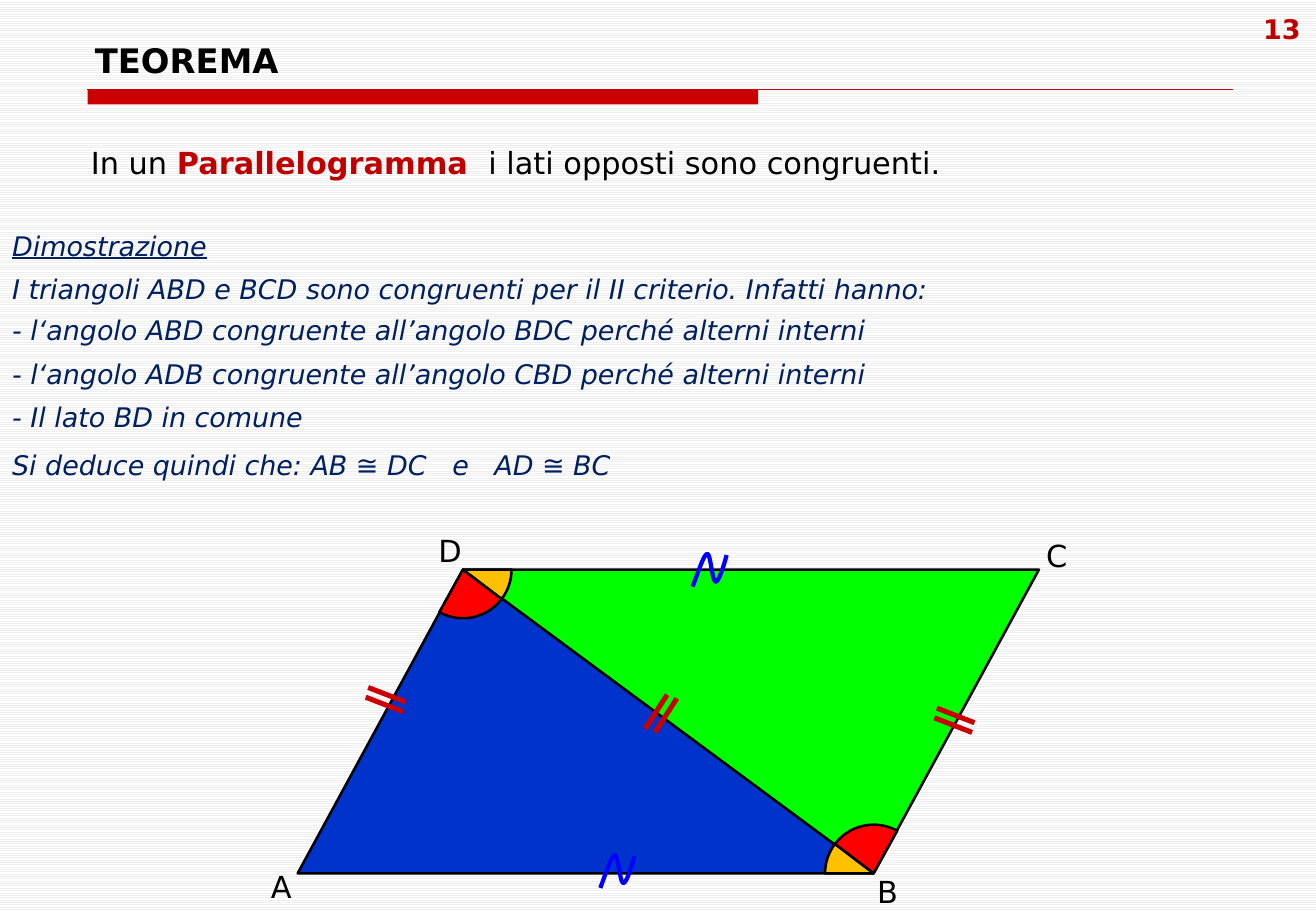
from pptx import Presentation
from pptx.dml.color import RGBColor
from pptx.enum.dml import MSO_PATTERN
from pptx.enum.shapes import MSO_CONNECTOR, MSO_SHAPE
from pptx.enum.text import MSO_ANCHOR, MSO_AUTO_SIZE, PP_ALIGN
from pptx.oxml.ns import qn
from pptx.util import Inches, Pt
from lxml import etree

LEFT, CENTER = PP_ALIGN.LEFT, PP_ALIGN.CENTER
STRAIGHT = MSO_CONNECTOR.STRAIGHT
TRIANGLE, PARALLELOGRAM, PIE, RECT = (
    MSO_SHAPE.ISOSCELES_TRIANGLE, MSO_SHAPE.PARALLELOGRAM, MSO_SHAPE.PIE, MSO_SHAPE.RECTANGLE)
FONT = "DejaVu Sans"
COLORS = {
    "black": "000000", "white": "FFFFFF", "stripe": "EEEEEE", "rule": "CC0000",
    "accent": "C00000", "proof": "002060", "green": "00FF00", "blue": "0033CC",
    "yellow": "FFC000", "red": "FF0000", "wave": "0000FF",
}
# Each proof line with the space before it in points
PROOF = [
    ("Dimostrazione", 0),
    ("I triangoli ABD e BCD sono congruenti per il II criterio. Infatti hanno:", 6.5),
    ("- l‘angolo ABD congruente all’angolo BDC perché alterni interni", 5),
    ("- l‘angolo ADB congruente all’angolo CBD perché alterni interni", 6.5),
    ("- Il lato BD in comune", 6.5),
    ("Si deduce quindi che: AB ≅ DC   e   AD ≅ BC", 9.5),
]


def color(name):
    return RGBColor.from_string(COLORS[name])


def place(sp, x, y, w, h):
    sp.left, sp.top, sp.width, sp.height = (Inches(v) for v in (x, y, w, h))


def add_run(p, text, size=16, fill="black", bold=False, italic=False, underline=False):
    r = p.add_run()
    r.text = text
    f = r.font
    f.name, f.size, f.bold, f.italic, f.underline = FONT, Pt(size), bold, italic, underline
    f.color.rgb = color(fill)


def add_text(s, box, align=LEFT, wrap=True):
    tf = s.shapes.add_textbox(*(Inches(v) for v in box)).text_frame
    tf.word_wrap = wrap
    p = tf.paragraphs[0]
    p.alignment = align
    return p


def style(sp, fill=None, line=None, width=1.5):
    sp.shadow.inherit = False
    if fill:
        sp.fill.solid()
        sp.fill.fore_color.rgb = color(fill)
    else:
        sp.fill.background()
    if line:
        sp.line.color.rgb = color(line)
        sp.line.width = Pt(width)
    else:
        sp.line.fill.background()


def add_preset(s, kind, box, adjustments=(), rotation=0, **look):
    sp = s.shapes.add_shape(kind, *(Inches(v) for v in box))
    for i, value in enumerate(adjustments):
        sp.adjustments[i] = value
    sp.rotation = rotation
    style(sp, **look)


def add_line(s, start, end, line="black", width=1.5):
    c = s.shapes.add_connector(STRAIGHT, *(Inches(v) for v in (*start, *end)))
    c.line.color.rgb = color(line)
    c.line.width = Pt(width)
    etree.SubElement(c._element.spPr, qn("a:effectLst"))


def add_wedge(s, center, start, end, fill):
    """Angle mark; degrees run clockwise from the right."""
    radius = 0.4
    box = (center[0] - radius, center[1] - radius, 2 * radius, 2 * radius)
    add_preset(s, PIE, box, (start * 0.6, end * 0.6), fill=fill, line="black")


def add_double_tick(s, x, y, dx, dy, gap):
    for i in range(2):
        x0, y0 = x + i * gap[0], y + i * gap[1]
        add_line(s, (x0, y0), (x0 + dx, y0 + dy), "rule", 3)


def add_wave(s, x, y):
    """Wavy mark made of three cubic curves, sampled as short segments."""
    knots = [(0, 0.28), (0.05, 0.15), (0.09, 0.02), (0.12, 0.01), (0.15, 0.01),
             (0.16, 0.24), (0.19, 0.24), (0.22, 0.24), (0.27, 0.06), (0.28, 0.02)]
    points = []
    for k in range(0, 9, 3):
        for step in range(1, 13):
            t = step / 12
            weights = ((1 - t) ** 3, 3 * t * (1 - t) ** 2, 3 * t * t * (1 - t), t ** 3)
            points.append(tuple(
                Inches(origin + sum(w * q[axis] for w, q in zip(weights, knots[k:k + 4])))
                for axis, origin in enumerate((x, y))))
    fb = s.shapes.build_freeform(Inches(x), Inches(y + knots[0][1]))
    fb.add_line_segments(points, close=False)
    style(fb.convert_to_shape(), line="wave", width=2.5)


def add_header(s, x, y, w, h):
    # Rule: thick bar and thin line
    add_preset(s, RECT, (x, y + h, 5.52, 0.12), fill="rule")
    add_line(s, (x, y + h), (x + 9.43, y + h), "rule", 0.75)
    # Page number
    add_run(add_text(s, (10.18, 0.05, 0.74, 0.52), CENTER), "13", fill="accent", bold=True)
    # Title
    title = s.shapes.title
    place(title, x - 0.04, y, w, h - 0.03)
    tf = title.text_frame
    tf.vertical_anchor, tf.auto_size = MSO_ANCHOR.BOTTOM, MSO_AUTO_SIZE.NONE
    p = tf.paragraphs[0]
    p.alignment = LEFT
    add_run(p, "TEOREMA", 20, bold=True)


def add_statement(s, *box):
    p = add_text(s, box)
    add_run(p, "In un ", 18)
    add_run(p, "Parallelogramma ", 18, "accent", bold=True)
    add_run(p, " i lati opposti sono congruenti.", 18)


def add_proof(s, *box):
    body = s.placeholders[1]
    place(body, *box)
    tf = body.text_frame
    tf.auto_size = MSO_AUTO_SIZE.NONE
    for i, (text, before) in enumerate(PROOF):
        p = tf.paragraphs[0] if i == 0 else tf.add_paragraph()
        p.space_before = Pt(before)
        pPr = p._p.get_or_add_pPr()
        pPr.set("marL", "0")
        pPr.set("indent", "0")
        etree.SubElement(pPr, qn("a:buNone"))
        add_run(p, text, fill="proof", italic=True, underline=i == 0)


def add_figure(s, x, y, w, h):
    slant = 1.36
    base = w - slant
    a, b, c, d = (x, y + h), (x + base, y + h), (x + w, y), (x + slant, y)
    # Two congruent triangles, outline and diagonal
    apex = (slant / base,)
    add_preset(s, TRIANGLE, (d[0], y, base, h), apex, 180, fill="green")
    add_preset(s, TRIANGLE, (x, y, base, h), apex, fill="blue")
    add_preset(s, PARALLELOGRAM, (x, y, w, h), (slant / h,), line="black")
    add_line(s, d, b)
    # Angle marks, turned by half a circle from D to B
    for vertex, turn in ((d, 0), (b, 180)):
        add_wedge(s, vertex, turn, turn + 37.2, "yellow")
        add_wedge(s, vertex, turn + 37.2, turn + 119, "red")
    # Side marks
    add_double_tick(s, x + 2.86, y + 1.31, 0.18, -0.28, (0.08, 0.03))
    for dx, dy in ((0.56, 1.05), (5.24, 1.22)):
        add_double_tick(s, x + dx, y + dy, 0.31, 0.12, (0.02, -0.08))
    for dx, dy in ((3.25, -0.14), (2.49, 2.34)):
        add_wave(s, x + dx, y + dy)
    # Vertex letters
    for letter, (vx, vy), dx, dy in (("A", a, -0.32, -0.09), ("B", b, -0.07, -0.05),
                                     ("C", c, -0.04, -0.32), ("D", d, -0.3, -0.36)):
        add_run(add_text(s, (vx + dx, vy + dy, 0.38, 0.4), wrap=False), letter, 18)


def main():
    prs = Presentation()
    prs.slide_width, prs.slide_height = Inches(10.83), Inches(7.5)
    s = prs.slides.add_slide(prs.slide_layouts[1])
    # Striped background
    fill = s.background.fill
    fill.patterned()
    fill.pattern = MSO_PATTERN.LIGHT_HORIZONTAL
    fill.fore_color.rgb, fill.back_color.rgb = color("stripe"), color("white")
    add_header(s, 0.72, 0.33, 9.48, 0.41)
    add_statement(s, 0.65, 1.14, 9.69, 0.4)
    add_proof(s, 0, 1.84, 10.83, 2.14)
    add_figure(s, 2.45, 4.69, 6.1, 2.5)
    prs.save("out.pptx")


if __name__ == "__main__":
    main()
